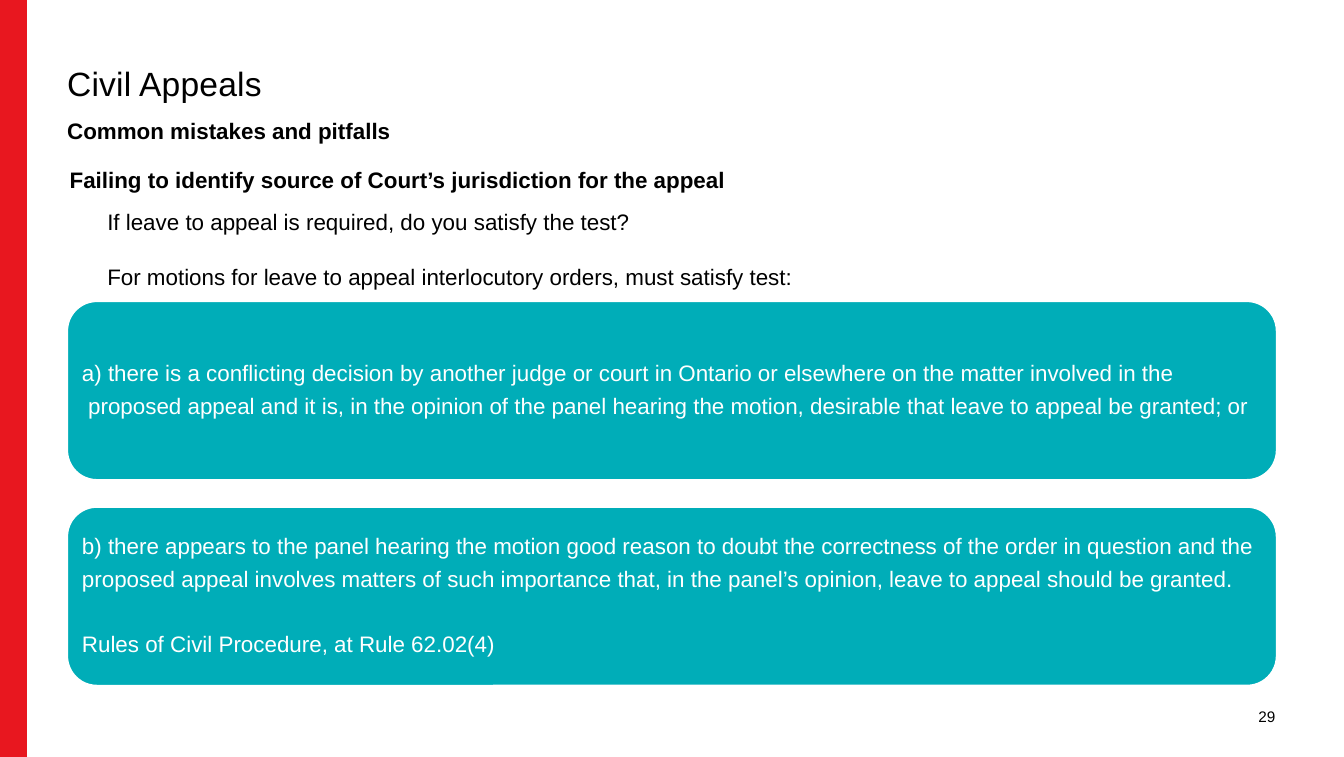
import pptx
import pptx.util
import pptx.dml.color
import pptx.enum.shapes
import pptx.enum.text
from pptx.oxml.ns import qn

PX = 9144  # 100 px to the inch
COLORS = {"page": "FFFFFF", "stripe": "E8171F", "card": "00ADB8", "ink": "000000"}
ALIGN = pptx.enum.text.PP_ALIGN
ANCHOR = pptx.enum.text.MSO_ANCHOR
SHAPES = pptx.enum.shapes.MSO_SHAPE

# Content
TITLE = "Civil Appeals"
SUBTITLE = "Common mistakes and pitfalls"
TOPIC = "Failing to identify source of Court’s jurisdiction for the appeal"
QUESTIONS = [
    "If leave to appeal is required, do you satisfy the test?",
    "For motions for leave to appeal interlocutory orders, must satisfy test:",
]
# Each card: (lines, space before its last line in points)
CARDS = [
    ([
        "a) there is a conflicting decision by another judge or court in Ontario or elsewhere on the matter involved in the",
        " proposed appeal and it is, in the opinion of the panel hearing the motion, desirable that leave to appeal be granted; or",
    ], 0),
    ([
        "b) there appears to the panel hearing the motion good reason to doubt the correctness of the order in question and the",
        "proposed appeal involves matters of such importance that, in the panel’s opinion, leave to appeal should be granted.",
        "Rules of Civil Procedure, at Rule 62.02(4)",
    ], 17),
]
PAGE_NUMBER = "29"

# Layout
PAGE_W, PAGE_H = 1000, 563
LEFT, WIDTH = 50, 900
CARD_TOP, CARD_H, CARD_STEP, CARD_PAD = 224, 133, 153, 6

deck = pptx.Presentation()
deck.slide_width, deck.slide_height = PAGE_W * PX, PAGE_H * PX
page = deck.slides.add_slide(deck.slide_layouts[6])


def color(name):
    return pptx.dml.color.RGBColor.from_string(COLORS[name])


def add_block(kind, left, top, width, height, fill, line=None):
    block = page.shapes.add_shape(kind, left * PX, top * PX, width * PX, height * PX)
    block.shadow.inherit = False
    block.fill.solid()
    block.fill.fore_color.rgb = color(fill)
    if line:
        block.line.color.rgb = color(line)
        block.line.width = pptx.util.Pt(1)
    else:
        block.line.fill.background()


def add_text(lines, left, top, width, height, size=12, ink="ink", bold=False,
             inset=(0, 0), anchor=ANCHOR.TOP, align=ALIGN.LEFT,
             spacing=1.0, after=0, last_gap=0):
    box = page.shapes.add_textbox(left * PX, top * PX, width * PX, height * PX)
    frame = box.text_frame
    frame.word_wrap = True
    frame.vertical_anchor = anchor
    frame.margin_left = frame.margin_right = inset[0] * PX
    frame.margin_top = frame.margin_bottom = inset[1] * PX
    frame.text = "\n".join(lines)
    for para in frame.paragraphs:
        para.alignment = align
        para.line_spacing = spacing
        para.space_after = pptx.util.Pt(after)
        para.font.name = "Arial"
        para.font.size = pptx.util.Pt(size)
        para.font.bold = bold
        para.font.color.rgb = color(ink)
    if last_gap:
        frame.paragraphs[-1].space_before = pptx.util.Pt(last_gap)
    return frame


# Red stripe and page number
add_block(SHAPES.RECTANGLE, 0, 0, 20, PAGE_H, "stripe")
add_text([PAGE_NUMBER], 893, 503, 56, 60, size=8.2, anchor=ANCHOR.MIDDLE, align=ALIGN.RIGHT)

# Headings, the title slightly letter-spaced
title = add_text([TITLE], LEFT, 50, WIDTH, 37, size=18, spacing=0.9)
title.paragraphs[0].runs[0].font._element.set("spc", "10")
add_text([SUBTITLE], LEFT, 87, WIDTH, 23, bold=True)

# Cards with the two limbs of the test
for index, (lines, last_gap) in enumerate(CARDS):
    top = CARD_TOP + index * CARD_STEP
    add_block(SHAPES.ROUNDED_RECTANGLE, LEFT, top, WIDTH, CARD_H, "card", line="page")
    add_text(lines, LEFT + CARD_PAD, top + CARD_PAD, WIDTH - 2 * CARD_PAD, CARD_H - 2 * CARD_PAD,
             ink="page", inset=(5, 5), anchor=ANCHOR.MIDDLE,
             spacing=0.9, after=4.7, last_gap=last_gap)

# Topic and questions above the cards
add_text([TOPIC], 42, 119, 563, 30, bold=True, inset=(10, 5))
add_text(QUESTIONS, 70, 150, 694, 71, inset=(10, 5), last_gap=15)

deck.save("out.pptx")
